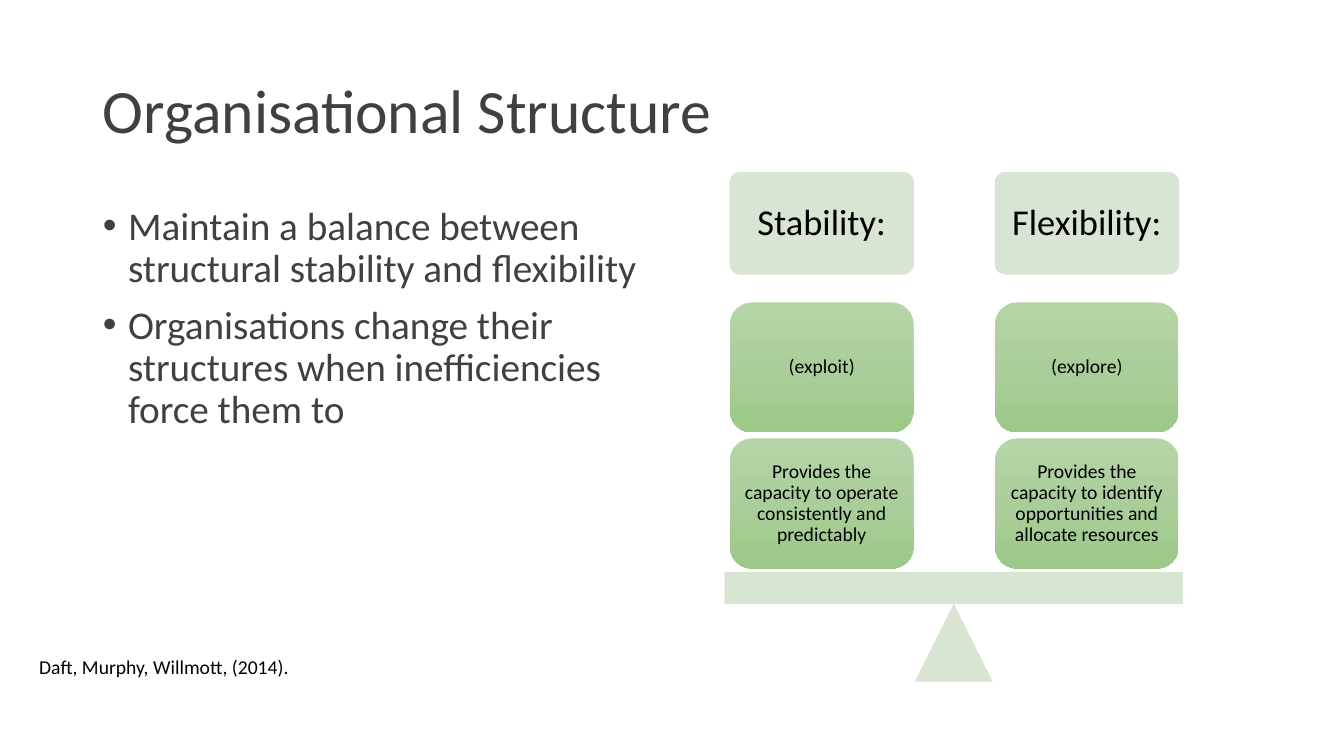
from copy import deepcopy

from lxml import etree
from pptx import Presentation
from pptx.dml.color import RGBColor
from pptx.enum.shapes import MSO_SHAPE
from pptx.enum.text import MSO_ANCHOR, MSO_AUTO_SIZE, PP_ALIGN
from pptx.oxml.ns import qn
from pptx.util import Inches, Pt

ROUNDED, RECTANGLE, TRIANGLE = (
    MSO_SHAPE.ROUNDED_RECTANGLE, MSO_SHAPE.RECTANGLE, MSO_SHAPE.ISOSCELES_TRIANGLE)
MIDDLE, TOP = MSO_ANCHOR.MIDDLE, MSO_ANCHOR.TOP
LEFT, CENTER = PP_ALIGN.LEFT, PP_ALIGN.CENTER
NO_AUTOFIT, GROW = MSO_AUTO_SIZE.NONE, MSO_AUTO_SIZE.SHAPE_TO_FIT_TEXT

COLORS = {
    "heading": "404041",
    "text": "000000",
    "pale": "D5E3CF",
    "weight_top": "B5D5A7",
    "weight_middle": "AACE9A",
    "weight_bottom": "9CC987",
}
FONT = "Calibri"


def write(paragraph, text, size, color, align=LEFT, line_spacing=0.9):
    paragraph.alignment = align
    paragraph.line_spacing = line_spacing
    run = paragraph.add_run()
    run.text = text
    run.font.name = FONT
    run.font.size = Pt(size)
    run.font.color.rgb = RGBColor.from_string(COLORS[color])


def add_scale_part(kind, left, top, width, height, text="", size=14, inset=0.06, pale=True):
    """Add one part of the balance: pale and see-through, or a graded weight."""
    part = balance.shapes.add_shape(
        kind, Inches(left), Inches(top), Inches(width), Inches(height))
    part.shadow.inherit = False
    fill = part.fill
    if pale:
        fill.solid()
        part.line.width = Pt(0.5)
        for paint in (fill, part.line.fill):
            paint.solid()
            paint.fore_color.rgb = RGBColor.from_string(COLORS["pale"])
        for color in part._element.spPr.iter(qn("a:srgbClr")):
            etree.SubElement(color, qn("a:alpha")).set("val", "90000")
    else:
        part.line.fill.background()
        fill.gradient()
        fill.gradient_angle = 270
        first_stop = part._element.spPr.find(".//" + qn("a:gs"))
        first_stop.addnext(deepcopy(first_stop))
        shades = ("weight_top", "weight_middle", "weight_bottom")
        for stop, shade, position in zip(fill.gradient_stops, shades, (0, 0.5, 1)):
            stop.color.rgb = RGBColor.from_string(COLORS[shade])
            stop.position = position
    if text:
        frame = part.text_frame
        frame.word_wrap = True
        frame.vertical_anchor = MIDDLE
        frame.margin_left = frame.margin_right = Inches(inset)
        frame.margin_top = frame.margin_bottom = Inches(inset)
        write(frame.paragraphs[0], text, size, "text", CENTER)
    return part


prs = Presentation()
prs.slide_width, prs.slide_height = Inches(13.33), Inches(7.5)
slide = prs.slides.add_slide(prs.slide_layouts[1])

title = slide.shapes.title
title.left, title.top = Inches(0.92), Inches(0.4)
title.width, title.height = Inches(11.5), Inches(1.45)
title.text_frame.auto_size = NO_AUTOFIT
title.text_frame.vertical_anchor = MIDDLE
write(title.text_frame.paragraphs[0], "Organisational Structure", 44, "heading")

points = slide.placeholders[1]
points.left, points.top = Inches(0.92), Inches(2)
points.width, points.height = Inches(5.59), Inches(4.76)
points.text_frame.auto_size = NO_AUTOFIT
points.text_frame.vertical_anchor = TOP
for index, point in enumerate((
    "Maintain a balance between structural stability and flexibility",
    "Organisations change their structures when inefficiencies force them to",
)):
    paragraph = points.text_frame.add_paragraph() if index else points.text_frame.paragraphs[0]
    properties = paragraph._p.get_or_add_pPr()
    properties.set("marL", str(Inches(0.25)))
    properties.set("indent", str(Inches(-0.25)))
    etree.SubElement(properties, qn("a:buFont")).set("typeface", "Arial")
    etree.SubElement(properties, qn("a:buChar")).set("char", "•")
    paragraph.space_before = Pt(10 if index else 0)
    write(paragraph, point, 28, "heading")

balance = slide.shapes.add_group_shape()
pan_width = 1.82
pans = (
    (7.24, "Stability:", "(exploit)",
     "Provides the capacity to operate consistently and predictably"),
    (9.87, "Flexibility:", "(explore)",
     "Provides the capacity to identify opportunities and allocate resources"),
)
for left, heading, *weights in pans:
    label = add_scale_part(ROUNDED, left, 1.71, pan_width, 1.01, heading, 26, 0.11)
    label.adjustments[0] = 0.1
    for row, weight in enumerate(weights):
        add_scale_part(ROUNDED, left, 3 + row * 1.35, pan_width, 1.29, weight, pale=False)
add_scale_part(TRIANGLE, 9.08, 6, 0.76, 0.76)
add_scale_part(RECTANGLE, 7.19, 5.68, 4.54, 0.31)

citation = slide.shapes.add_textbox(Inches(0.29), Inches(6.45), Inches(2.75), Inches(0.34))
citation.text_frame.word_wrap = False
citation.text_frame.auto_size = GROW
write(citation.text_frame.paragraphs[0], "Daft, Murphy, Willmott, (2014).", 14, "text",
      line_spacing=1.0)

prs.save("out.pptx")
